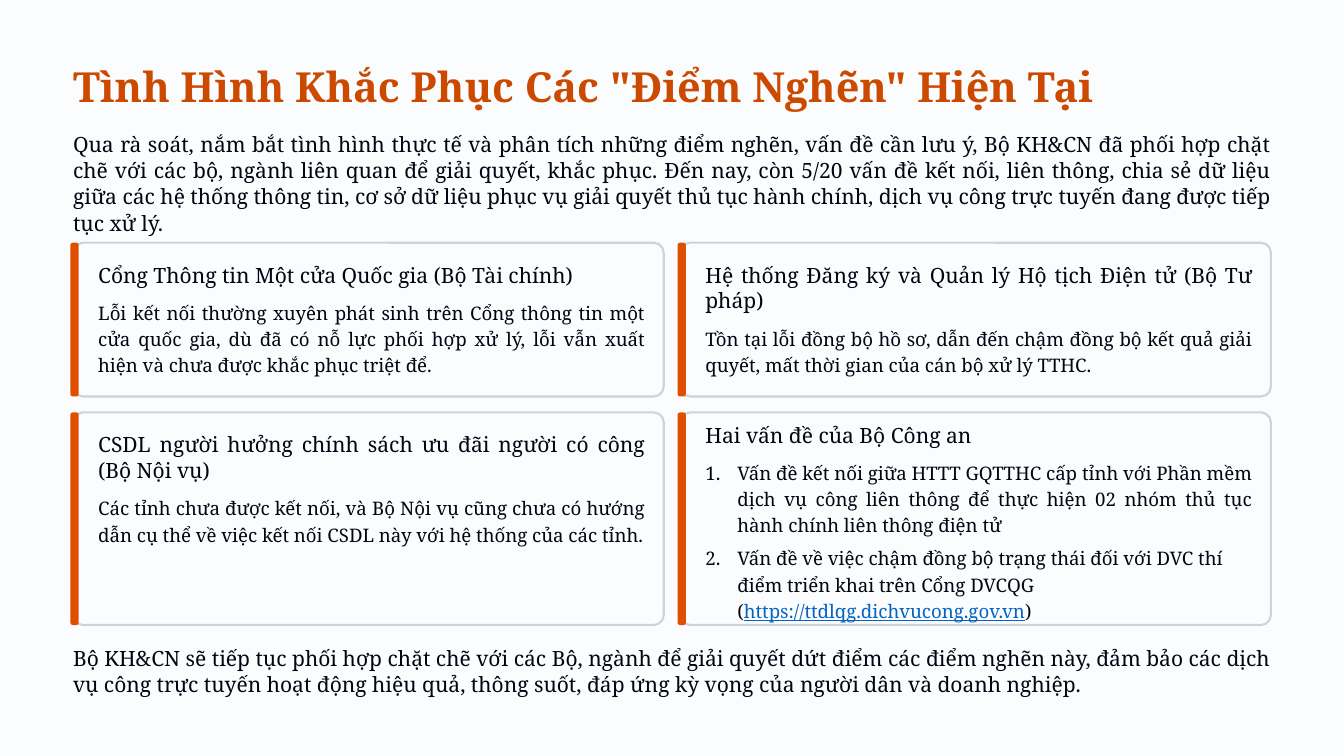
import pptx
import pptx.util
import pptx.dml.color
import pptx.enum.shapes
import pptx.enum.text
import lxml.etree

Cm = pptx.util.Cm
Pt = pptx.util.Pt
FONT = "Noto Serif"
INK, RUST, LINK = "010511", "CC4900", "0563C1"
PAPER, EDGE, BAR = "FBFCFE", "CFD2D8", "E04F00"
LEFT, WIDE = 2.21, 36.22
CARD_WIDE, TEXT_WIDE = 17.86, 16.54
LINE = 0.79

TITLE = 'Tình Hình Khắc Phục Các "Điểm Nghẽn" Hiện Tại'
INTRO = (
    "Qua rà soát, nắm bắt tình hình thực tế và phân tích những điểm nghẽn, "
    "vấn đề cần lưu ý, Bộ KH&CN đã phối hợp chặt chẽ với các bộ, ngành liên quan "
    "để giải quyết, khắc phục. Đến nay, còn 5/20 vấn đề kết nối, liên thông, "
    "chia sẻ dữ liệu giữa các hệ thống thông tin, cơ sở dữ liệu phục vụ giải quyết "
    "thủ tục hành chính, dịch vụ công trực tuyến đang được tiếp tục xử lý."
)
CLOSE = (
    "Bộ KH&CN sẽ tiếp tục phối hợp chặt chẽ với các Bộ, ngành để giải quyết dứt điểm "
    "các điểm nghẽn này, đảm bảo các dịch vụ công trực tuyến hoạt động hiệu quả, "
    "thông suốt, đáp ứng kỳ vọng của người dân và doanh nghiệp."
)
# Row, column, lines in the heading, heading, body
CARDS = [
    (0, 0, 1, "Cổng Thông tin Một cửa Quốc gia (Bộ Tài chính)",
     "Lỗi kết nối thường xuyên phát sinh trên Cổng thông tin một cửa quốc gia, "
     "dù đã có nỗ lực phối hợp xử lý, lỗi vẫn xuất hiện và chưa được khắc phục triệt để."),
    (0, 1, 2, "Hệ thống Đăng ký và Quản lý Hộ tịch Điện tử (Bộ Tư pháp)",
     "Tồn tại lỗi đồng bộ hồ sơ, dẫn đến chậm đồng bộ kết quả giải quyết, "
     "mất thời gian của cán bộ xử lý TTHC."),
    (1, 0, 2, "CSDL người hưởng chính sách ưu đãi người có công (Bộ Nội vụ)",
     "Các tỉnh chưa được kết nối, và Bộ Nội vụ cũng chưa có hướng dẫn cụ thể "
     "về việc kết nối CSDL này với hệ thống của các tỉnh."),
    (1, 1, 1, "Hai vấn đề của Bộ Công an", None),
]
ROWS = [(7.34, 4.65), (12.47, 6.43)]
COLS = [LEFT, 20.57]
FIRST = (
    "Vấn đề kết nối giữa HTTT GQTTHC cấp tỉnh với Phần mềm dịch vụ công liên thông "
    "để thực hiện 02 nhóm thủ tục hành chính liên thông điện tử"
)
NEXT = [
    "Vấn đề về việc chậm đồng bộ trạng thái đối với DVC thí điểm triển khai "
    "trên Cổng DVCQG (",
    ("https://ttdlqg.dichvucong.gov.vn", LINK),
    ")",
]


def tint(code):
    return pptx.dml.color.RGBColor.from_string(code)


def number(para, start):
    """Make the paragraph a numbered item with a hanging indent."""
    props = para._p.get_or_add_pPr()
    props.set("marL", str(Cm(0.97)))
    props.set("indent", str(-Cm(0.97)))
    name = pptx.oxml.ns.qn("a:buAutoNum")
    mark = lxml.etree.SubElement(props, name, type="arabicPeriod")
    mark.set("startAt", str(start))


def write(slide, text, x, y, w, h, size=16, color=INK, bold=False,
          pitch=22.5, just=True, start=None):
    """Place text; a list may mix plain strings and (string, link colour) pairs."""
    frame = slide.shapes.add_textbox(Cm(x), Cm(y), Cm(w), Cm(h)).text_frame
    frame.margin_left = frame.margin_right = 0
    frame.margin_top = frame.margin_bottom = 0
    frame.word_wrap = True
    para = frame.paragraphs[0]
    if start:
        number(para, start)
    align = pptx.enum.text.PP_ALIGN
    para.alignment = align.JUSTIFY if just else align.LEFT
    para.line_spacing = Pt(pitch)
    for part in [text] if isinstance(text, str) else text:
        plain = isinstance(part, str)
        run = para.add_run()
        run.text = part if plain else part[0]
        font = run.font
        font.name, font.size, font.bold = FONT, Pt(size), bold
        font.color.rgb = tint(color if plain else part[1])
        font.underline = not plain


def panel(slide, x, y, w, h, round_by, fill, edge=None):
    kind = pptx.enum.shapes.MSO_SHAPE.ROUNDED_RECTANGLE
    shape = slide.shapes.add_shape(kind, Cm(x), Cm(y), Cm(w), Cm(h))
    shape.adjustments[0] = round_by
    shape.shadow.inherit = False
    shape.fill.solid()
    shape.fill.fore_color.rgb = tint(fill)
    if edge:
        shape.line.color.rgb = tint(edge)
        shape.line.width = Pt(1.8)
    else:
        shape.line.fill.background()


def card(slide, row, col, lines, head, body):
    x, (y, h) = COLS[col], ROWS[row]
    panel(slide, x, y, CARD_WIDE, h, 0.3 / h, PAPER, EDGE)
    panel(slide, x - 0.08, y, 0.25, h, 0.3, BAR)
    x += 0.76
    y += 0.57 if body else 0.28
    write(slide, head, x, y, TEXT_WIDE, lines * LINE, size=18, pitch=22)
    y += lines * LINE + 0.3
    if body:
        write(slide, body, x, y, TEXT_WIDE, 1.6)
    else:
        write(slide, FIRST, x, y, TEXT_WIDE, 2.41, start=1)
        write(slide, NEXT, x, y + 2.59, TEXT_WIDE, 1.6, just=False, start=2)


def main():
    deck = pptx.Presentation()
    deck.slide_width, deck.slide_height = Cm(40.64), Cm(22.86)
    slide = deck.slides.add_slide(deck.slide_layouts[6])
    back = slide.background.fill
    back.solid()
    back.fore_color.rgb = tint(PAPER)
    write(slide, TITLE, LEFT, 1.78, WIDE, 1.57, size=35.5, color=RUST,
          bold=True, pitch=44.5, just=False)
    write(slide, INTRO, LEFT, 3.94, WIDE, 2.41, size=18)
    for item in CARDS:
        card(slide, *item)
    write(slide, CLOSE, LEFT, 19.48, WIDE, 1.6, size=18)
    deck.save("out.pptx")


if __name__ == "__main__":
    main()
